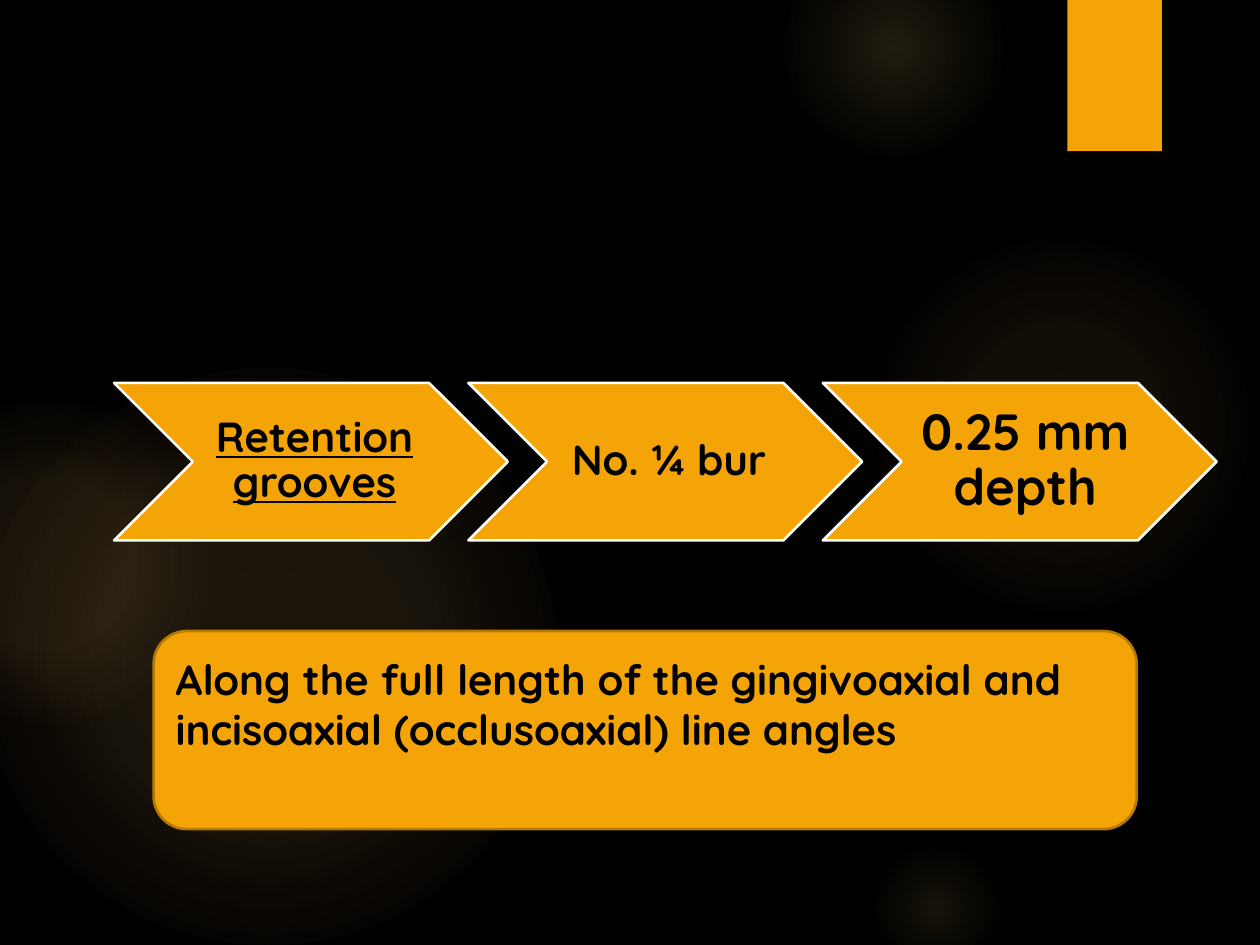
from lxml import etree
from pptx import Presentation
from pptx.dml.color import RGBColor
from pptx.enum import shapes, text
from pptx.oxml import ns
from pptx.util import Pt

COLORS = {"back": "000000", "amber": "F5A408", "glow": "FAC96A",
          "edge": "B57906", "white": "FFFFFF", "ink": "000000"}
FONT = "Quicksand"

# left, top, diameter, then (position %, opacity %) from the centre out
GLOWS = [
    (496, 132, 222, [(0, 7), (36, 6), (69, 0)]),
    (448, -36, 126, [(0, 14), (36, 7), (73, 0)]),
    (496, 480, 78, [(0, 10), (31, 5), (66, 0)]),
    (-12, 210, 330, [(0, 11), (36, 10), (75, 0)]),
    (-66, 228, 186, [(0, 8), (36, 8), (72, 0)]),
]
TAB = (610, 0, 54, 86.4)

# text and its format
STEPS = [
    ("Retention grooves", {"size": 24, "underline": True, "left": 7.2}),
    ("No. ¼ bur", {"size": 24, "left": 7.2}),
    ("0.25 mm depth", {"size": 29, "left": 9.4}),
]
STEP_LEFT, STEP_TOP, STEP_W, STEP_H = 65.2, 218.8, 225, 90
STEP_PITCH = STEP_W * 0.9

NOTE = ("Along the full length of the gingivoaxial and "
        "incisoaxial (occlusoaxial) line angles")
NOTE_BOX = (87.8, 360.6, 561.8, 113.2)


def rgb(name):
    return RGBColor.from_string(COLORS[name])


def add_shape(slide, kind, box, fill="amber", line=None):
    sp = slide.shapes.add_shape(kind, *map(Pt, box))
    sp.shadow.inherit = False
    sp.fill.solid()
    sp.fill.fore_color.rgb = rgb(fill)
    if line:
        sp.line.color.rgb = rgb(line)
        sp.line.width = Pt(1.5)
    else:
        sp.line.fill.background()
    return sp


def set_text(sp, content, size=24, underline=None, align=text.PP_ALIGN.CENTER,
             spacing=0.9, left=7.2, right=2.9, top=2.9, bottom=2.9):
    tf = sp.text_frame
    tf.word_wrap = True
    tf.vertical_anchor = text.MSO_ANCHOR.MIDDLE
    tf.margin_left, tf.margin_right = Pt(left), Pt(right)
    tf.margin_top, tf.margin_bottom = Pt(top), Pt(bottom)
    p = tf.paragraphs[0]
    p.alignment = align
    p.line_spacing = spacing
    r = p.add_run()
    r.text = content
    r.font.name = FONT
    r.font.size = Pt(size)
    r.font.bold = True
    r.font.underline = underline
    r.font.color.rgb = rgb("ink")


def set_radial_fill(sp, stops):
    """Replace the solid fill by a fading circle of the glow colour."""
    def sub(parent, tag, **attrs):
        return etree.SubElement(parent, ns.qn(tag), attrs)

    solid = sp.element.spPr.find(ns.qn("a:solidFill"))
    grad = etree.Element(ns.qn("a:gradFill"), rotWithShape="1")
    stop_list = sub(grad, "a:gsLst")
    for position, opacity in stops:
        stop = sub(stop_list, "a:gs", pos=str(position * 1000))
        color = sub(stop, "a:srgbClr", val=COLORS["glow"])
        sub(color, "a:alpha", val=str(opacity * 1000))
    circle = sub(grad, "a:path", path="circle")
    sub(circle, "a:fillToRect", **dict.fromkeys("ltrb", "50000"))
    solid.getparent().replace(solid, grad)


def main():
    kinds = shapes.MSO_SHAPE
    prs = Presentation()
    prs.slide_width, prs.slide_height = Pt(720), Pt(540)
    slide = prs.slides.add_slide(prs.slide_layouts[6])
    slide.background.fill.solid()
    slide.background.fill.fore_color.rgb = rgb("back")

    for left, top, size, stops in GLOWS:
        sp = add_shape(slide, kinds.OVAL, (left, top, size, size), "glow")
        set_radial_fill(sp, stops)
    add_shape(slide, kinds.RECTANGLE, TAB)

    for i, (content, style) in enumerate(STEPS):
        box = (STEP_LEFT + i * STEP_PITCH, STEP_TOP, STEP_W, STEP_H)
        set_text(add_shape(slide, kinds.CHEVRON, box, line="white"),
                 content, **style)

    # The deep bottom margin lifts the note by half a line
    sp = add_shape(slide, kinds.ROUNDED_RECTANGLE, NOTE_BOX, line="edge")
    set_text(sp, NOTE, align=text.PP_ALIGN.LEFT, spacing=1.0,
             right=7.2, top=3.6, bottom=33.6)

    prs.save("out.pptx")


if __name__ == "__main__":
    main()
